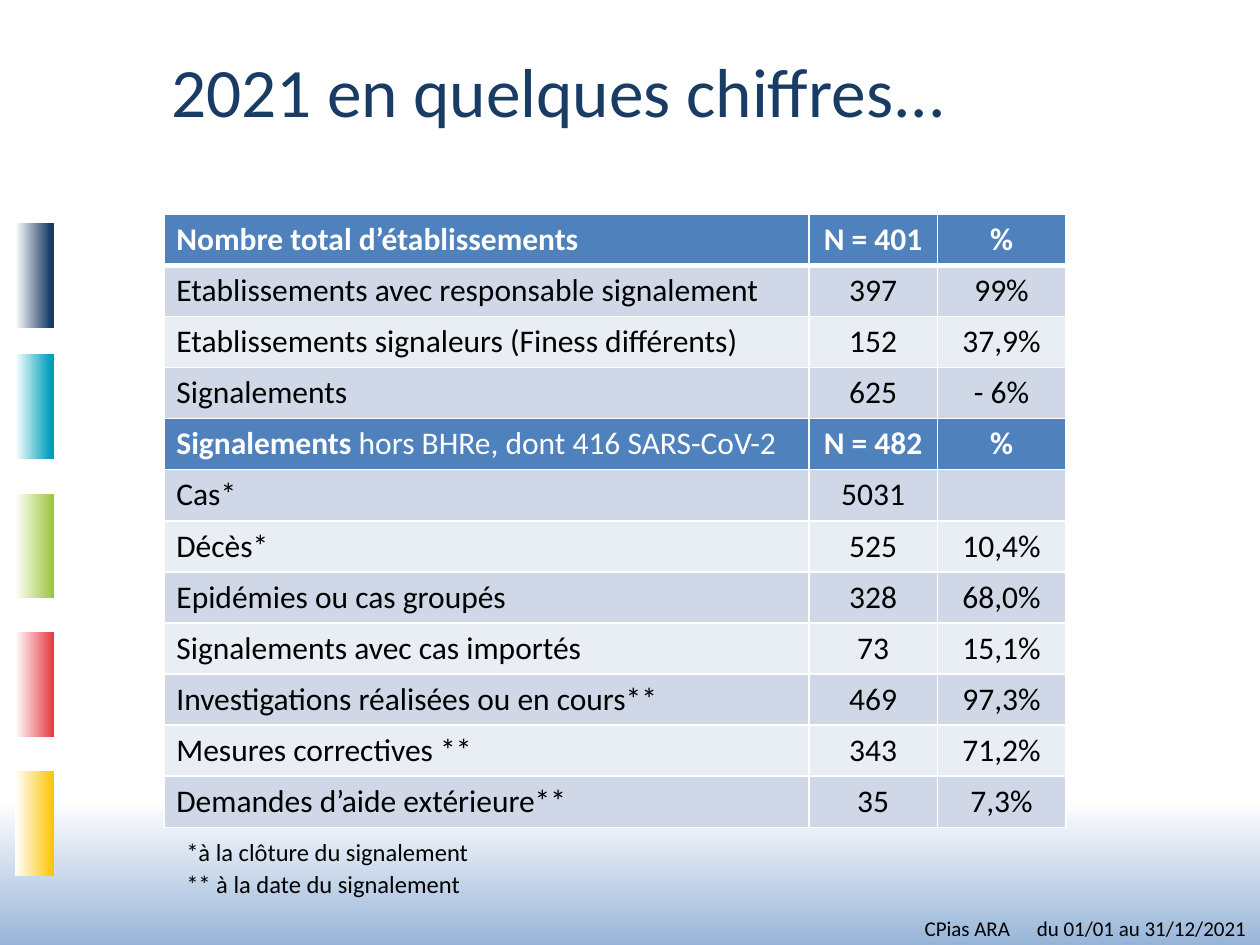
from dataclasses import dataclass
from typing import NamedTuple

from lxml.etree import SubElement
from pptx import Presentation
from pptx.dml.color import RGBColor
from pptx.enum.shapes import MSO_SHAPE
from pptx.enum.text import MSO_ANCHOR, PP_ALIGN
from pptx.oxml.ns import qn
from pptx.util import Inches, Pt


@dataclass(frozen=True)
class Theme:
    font: str = "Calibri"
    navy: str = "193C64"
    black: str = "000000"
    white: str = "FFFFFF"
    header: str = "4F81BD"
    bands: tuple = ("D0D8E8", "E9EDF4")
    horizon: str = "95B3D7"
    title: float = 39.6
    cell: float = 18
    note: float = 14
    footer: float = 12


class Box(NamedTuple):
    left: float
    top: float
    width: float
    height: float

    def inches(self) -> list:
        return [Inches(v) for v in self]


class Bar(NamedTuple):
    top: float
    color: str
    start: float = 0


class Row(NamedTuple):
    label: str
    count: str
    share: str
    header: bool = False
    plain: str = ""  # regular-weight end of a header label


T = Theme()

BARS = [
    Bar(2.03, T.navy, 0.1),
    Bar(3.07, "009FBB", 0.1),
    Bar(4.18, "9CC239"),
    Bar(5.28, "E53540"),
    Bar(6.38, "FDC300"),
]

ROWS = [
    Row("Nombre total d’établissements", "N = 401", "%", True),
    Row("Etablissements avec responsable signalement", "397", "99%"),
    Row("Etablissements signaleurs (Finess différents)", "152", "37,9%"),
    Row("Signalements", "625", "- 6%"),
    Row("Signalements ", "N = 482", "%", True, "hors BHRe, dont 416 SARS-CoV-2"),
    Row("Cas*", "5031", ""),
    Row("Décès*", "525", "10,4%"),
    Row("Epidémies ou cas groupés", "328", "68,0%"),
    Row("Signalements avec cas importés", "73", "15,1%"),
    Row("Investigations réalisées ou en cours**", "469", "97,3%"),
    Row("Mesures correctives **", "343", "71,2%"),
    Row("Demandes d’aide extérieure**", "35", "7,3%"),
]
COLUMNS = (5.12, 1.02, 1.02)
TABLE = Box(1.3, 1.7, sum(COLUMNS), 4.87)


def rgb(color: str) -> RGBColor:
    return RGBColor.from_string(color)


def style(p, size: float, color: str) -> None:
    p.font.name = T.font
    p.font.size = Pt(size)
    p.font.color.rgb = rgb(color)


def add_gradient(s, box: Box, rotation: float, color: str, start: float = 0) -> None:
    """Rectangle fading to white from its own top edge downwards."""
    sp = s.shapes.add_shape(MSO_SHAPE.RECTANGLE, *box.inches())
    sp.rotation = rotation
    sp.shadow.inherit = False
    sp.line.fill.background()
    sp.fill.gradient()
    sp.fill.gradient_angle = 270
    first, last = sp.fill.gradient_stops
    first.position, last.position = start, 1
    first.color.rgb, last.color.rgb = rgb(color), rgb(T.white)


def add_text(s, box: Box, lines: list[str], size: float, color: str, wrap: bool = True):
    tf = s.shapes.add_textbox(*box.inches()).text_frame
    tf.word_wrap = wrap
    for i, line in enumerate(lines):
        p = tf.paragraphs[0] if i == 0 else tf.add_paragraph()
        p.add_run().text = line
        style(p, size, color)
    return tf


def add_tab(p, position: float) -> None:
    tabs = SubElement(p._p.get_or_add_pPr(), qn("a:tabLst"))
    SubElement(tabs, qn("a:tab"), pos=str(Inches(position)), algn="l")


def set_borders(cell, top: float, bottom: float) -> None:
    tcPr = cell._tc.get_or_add_tcPr()
    for side, width in (("L", 1), ("R", 1), ("T", top), ("B", bottom)):
        ln = SubElement(tcPr, qn(f"a:ln{side}"), w=str(Pt(width)))
        SubElement(SubElement(ln, qn("a:solidFill")), qn("a:srgbClr"), val=T.white)


def fill_cell(cell, row: Row, column: int, fill: str) -> None:
    p = cell.text_frame.paragraphs[0]
    if column:
        p.alignment = PP_ALIGN.CENTER
    text = row[column]
    if text:
        r = p.add_run()
        r.text = text
        r.font.bold = row.header
    if column == 0 and row.plain:
        r = p.add_run()
        r.text = row.plain
        r.font.bold = False
    style(p, T.cell, T.white if row.header else T.black)
    cell.fill.solid()
    cell.fill.fore_color.rgb = rgb(fill)


def add_figures(s) -> None:
    table = s.shapes.add_table(len(ROWS), len(COLUMNS), *TABLE.inches()).table
    table.first_row = table.horz_banding = False
    for column, width in zip(table.columns, COLUMNS):
        column.width = Inches(width)
    band = 0
    for i, row in enumerate(ROWS):
        table.rows[i].height = Inches(TABLE.height / len(ROWS))
        band = 0 if row.header else band + 1
        fill = T.header if row.header else T.bands[(band - 1) % 2]
        for j in range(len(COLUMNS)):
            cell = table.cell(i, j)
            set_borders(cell, top=3 if i == 1 else 1, bottom=3 if i == 0 else 1)
            fill_cell(cell, row, j, fill)


def main() -> None:
    prs = Presentation()
    prs.slide_width, prs.slide_height = Inches(10), Inches(7.5)
    s = prs.slides.add_slide(prs.slide_layouts[6])

    add_gradient(s, Box(0, 6.35, 10, 1.18), 180, T.horizon)
    for bar in BARS:
        add_gradient(s, Box(-0.14, bar.top, 0.83, 0.31), 90, bar.color, bar.start)

    title = add_text(s, Box(1.26, 0.36, 6.5, 0.7), ["2021 en quelques chiffres..."],
                     T.title, T.navy)
    title.vertical_anchor = MSO_ANCHOR.MIDDLE

    footer = add_text(s, Box(7.24, 7.22, 2.76, 0.3), [], T.footer, T.black, wrap=False)
    p = footer.paragraphs[0]
    add_tab(p, 0.89)
    p.add_run().text = "CPias ARA\tdu 01/01 au 31/12/2021"
    style(p, T.footer, T.black)

    add_figures(s)

    notes = add_text(s, Box(1.38, 6.57, 2.52, 0.62),
                     ["*à la clôture du signalement", "** à la date du signalement"],
                     T.note, T.black, wrap=False)
    for p in notes.paragraphs:
        p.line_spacing = 1.1

    prs.save("out.pptx")


if __name__ == "__main__":
    main()
